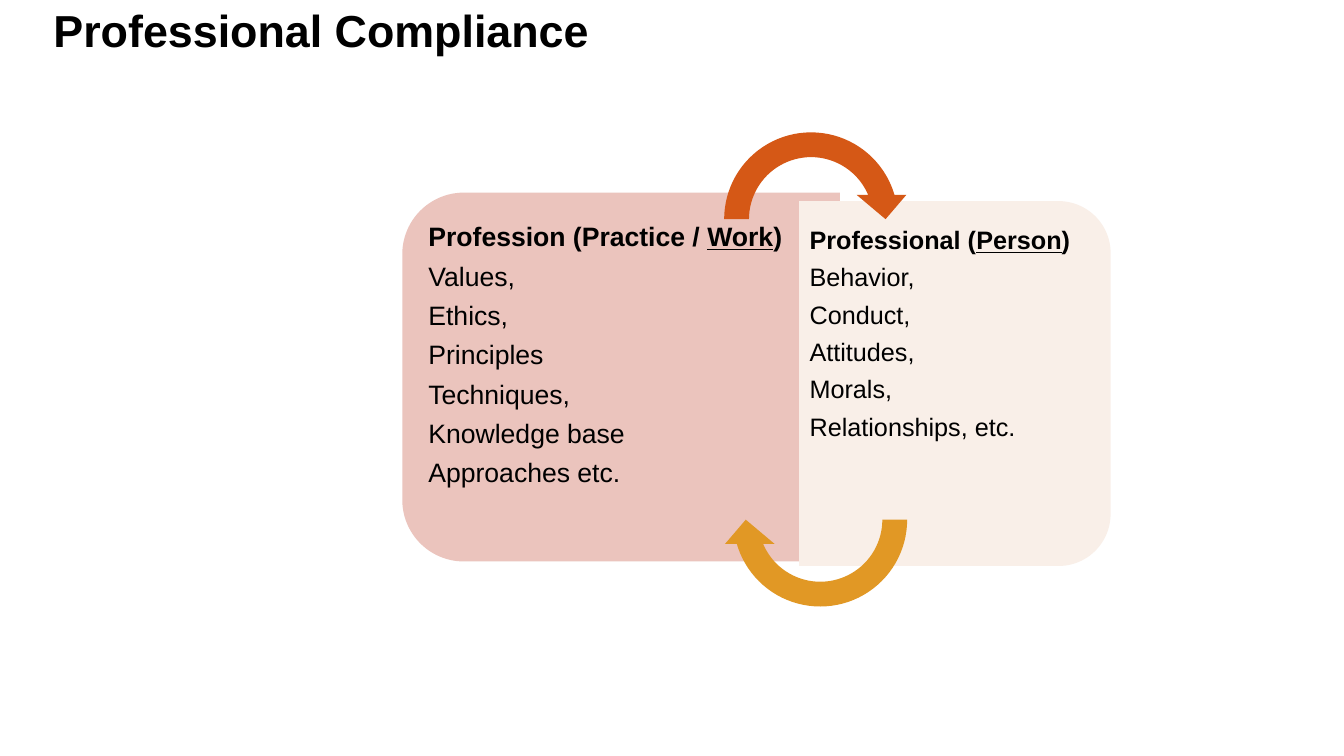
"""Build the Professional Compliance slide."""
from pptx import Presentation
from pptx.dml.color import RGBColor
from pptx.enum.shapes import MSO_SHAPE
from pptx.enum.text import MSO_ANCHOR, MSO_AUTO_SIZE, PP_ALIGN
from pptx.util import Inches, Pt

TAB = MSO_SHAPE.ROUND_2_SAME_RECTANGLE
ARROW = MSO_SHAPE.CIRCULAR_ARROW
TOP, MIDDLE = MSO_ANCHOR.TOP, MSO_ANCHOR.MIDDLE
LEFT = PP_ALIGN.LEFT
NO_FIT = MSO_AUTO_SIZE.NONE

BLACK = RGBColor(0x00, 0x00, 0x00)
ROSE = RGBColor(0xEB, 0xC4, 0xBD)
CREAM = RGBColor(0xF9, 0xEF, 0xE8)
RUST = RGBColor(0xD5, 0x58, 0x16)
AMBER = RGBColor(0xE1, 0x98, 0x25)

ROUND = (0.167, 0)
SWEEP = (0.125, 11.423, 204.577, 108, 0.125)
WORK = ["Values,", "Ethics,", "Principles", "Techniques,",
        "Knowledge base", "Approaches etc."]
PERSON = ["Behavior,", "Conduct,", "Attitudes,", "Morals,",
          "Relationships, etc."]


def write(para, text, size, bold=False, under=False, after=0):
    para.alignment = LEFT
    para.line_spacing = 0.9
    para.space_before = Pt(0)
    para.space_after = Pt(after)
    run = para.add_run()
    run.text = text
    font = run.font
    font.name = "Arial"
    font.size = Pt(size)
    font.bold = bold
    font.underline = under
    font.color.rgb = BLACK


class Page:
    def __init__(self, deck):
        self.slide = deck.slides.add_slide(deck.slide_layouts[5])
        self.shapes = self.slide.shapes

    def frame(self, shape, anchor, inset):
        frame = shape.text_frame
        frame.word_wrap = True
        frame.auto_size = NO_FIT
        frame.vertical_anchor = anchor
        (frame.margin_left, frame.margin_top, frame.margin_right,
         frame.margin_bottom) = map(Inches, inset)
        return frame

    def title(self, text, box):
        shape = self.shapes.title
        shape.left, shape.top, shape.width, shape.height = map(Inches, box)
        frame = self.frame(shape, MIDDLE, (0.1, 0.05, 0.1, 0.05))
        write(frame.paragraphs[0], text, 32, bold=True)

    def shape(self, kind, box, fill, adjust, turn=0):
        shape = self.shapes.add_shape(kind, *map(Inches, box))
        shape.shadow.inherit = False
        shape.fill.solid()
        shape.fill.fore_color.rgb = fill
        shape.line.fill.background()
        shape.rotation = turn
        for i, value in enumerate(adjust):
            shape.adjustments[i] = value

    def panel(self, box, inset, size, head, key, items):
        shape = self.shapes.add_textbox(*map(Inches, box))
        frame = self.frame(shape, TOP, inset)
        after = 0.4 * size
        first = frame.paragraphs[0]
        for text, under in ((head, False), (key, True), (")", False)):
            write(first, text, size, bold=True, under=under, after=after)
        for item in items:
            write(frame.add_paragraph(), item, size, after=after)


def main():
    deck = Presentation()
    deck.slide_width = Inches(13.33)
    deck.slide_height = Inches(7.5)
    page = Page(deck)
    page.title("Professional Compliance", (0.43, 0, 12.51, 0.65))
    page.shape(TAB, (4.33, 1.57, 3.66, 4.34), ROSE, ROUND, 270)
    page.panel((4.17, 2.09, 4.16, 3.31), (0.08, 0.13, 0.12, 0.13), 19,
               "Profession (Practice / ", "Work", WORK)
    page.shape(TAB, (7.66, 2.26, 3.62, 3.09), CREAM, ROUND, 90)
    page.panel((7.92, 2.14, 2.94, 3.32), (0.11, 0.12, 0.07, 0.12), 18,
               "Professional (", "Person", PERSON)
    page.shape(ARROW, (7.06, 1.19, 1.97, 1.97), RUST, SWEEP)
    page.shape(ARROW, (7.15, 4.17, 1.97, 1.97), AMBER, SWEEP, 180)
    deck.save("out.pptx")


if __name__ == "__main__":
    main()
